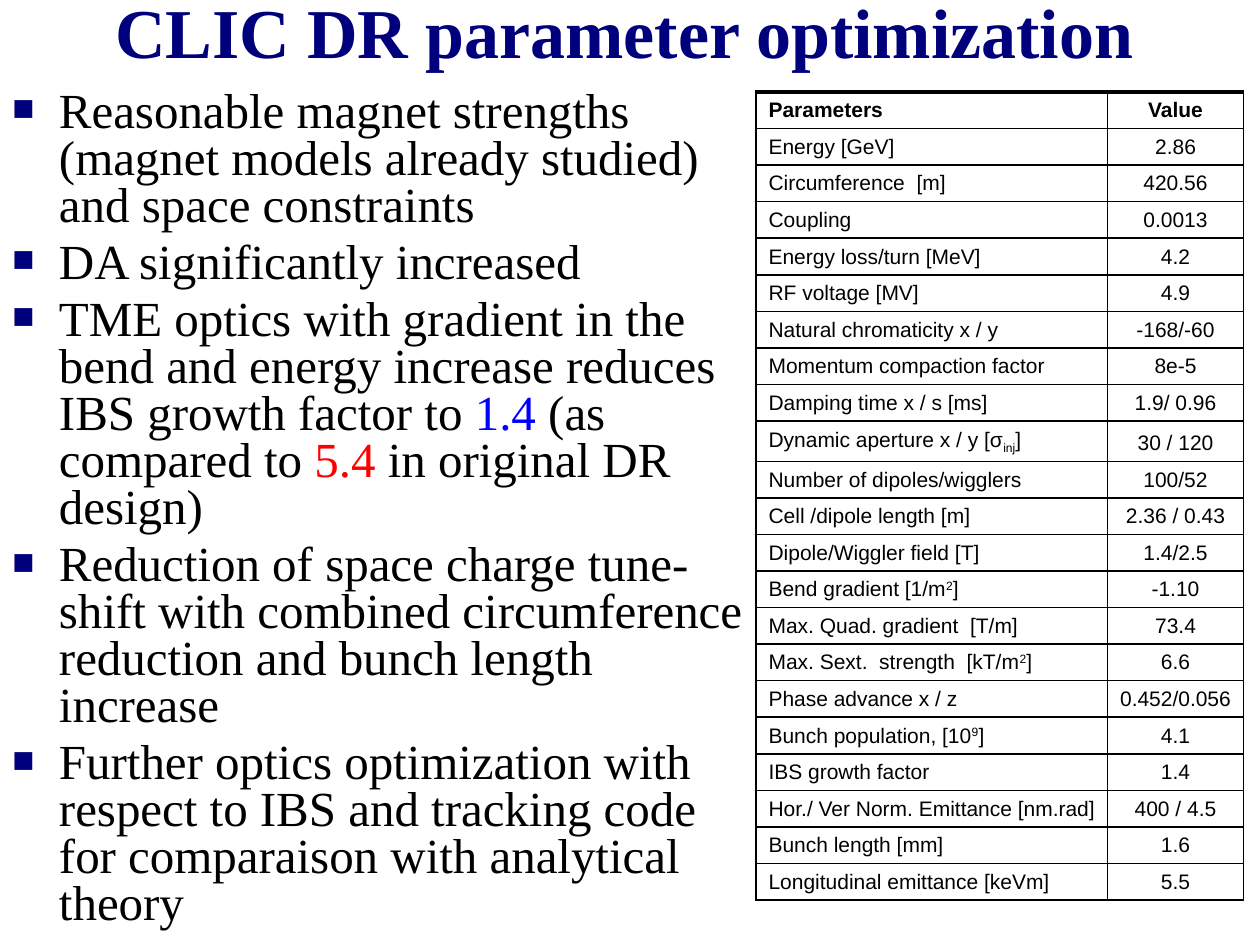
from lxml import etree
from pptx import Presentation, util as u
from pptx.dml.color import RGBColor
from pptx.enum import text
from pptx.oxml import parse_xml
from pptx.oxml.ns import nsdecls, qn

COLORS = {"navy": "00007D", "black": "000000", "blue": "0000FF", "red": "FF0000"}
TITLE = "CLIC DR parameter optimization"
BULLETS = [
    ["Reasonable magnet strengths (magnet models already studied) and space constraints"],
    ["DA significantly increased"],
    ["TME optics with gradient in the bend and energy increase reduces IBS growth factor to ",
     ("1.4 ", {"color": "blue"}), "(as compared to ",
     ("5.4 ", {"color": "red"}), "in original DR design)"],
    ["Reduction of space charge tune-shift with combined circumference reduction "
     "and bunch length increase"],
    ["Further optics optimization with respect to IBS and tracking code "
     "for comparaison with analytical theory"],
]
SUB, SUP = {"baseline": -25000}, {"baseline": 30000}
PARAMETERS = [
    (["Parameters"], "Value"),
    (["Energy [GeV]"], "2.86"),
    (["Circumference  [m]"], "420.56"),
    (["Coupling"], "0.0013"),
    (["Energy loss/turn [MeV]"], "4.2"),
    (["RF voltage [MV]"], "4.9"),
    (["Natural chromaticity x / y"], "-168/-60"),
    (["Momentum compaction factor"], "8e-5"),
    (["Damping time x / s [ms]"], "1.9/ 0.96"),
    (["Dynamic aperture x / y [σ", ("inj", SUB), "]"], "30 / 120"),
    (["Number of dipoles/wigglers"], "100/52"),
    (["Cell /dipole length [m]"], "2.36 / 0.43"),
    (["Dipole/Wiggler field [T]"], "1.4/2.5"),
    (["Bend gradient [1/m", ("2", SUP), "]"], "-1.10"),
    (["Max. Quad. gradient  [T/m]"], "73.4"),
    (["Max. Sext.  strength  [kT/m", ("2", SUP), "]"], "6.6"),
    (["Phase advance x / z"], "0.452/0.056"),
    (["Bunch population, [10", ("9", SUP), "]"], "4.1"),
    (["IBS growth factor"], "1.4"),
    (["Hor./ Ver Norm. Emittance [nm.rad]"], "400 / 4.5"),
    (["Bunch length [mm]"], "1.6"),
    (["Longitudinal emittance [keVm]"], "5.5"),
]


class Deck:
    """Holds the text styles and the current slide."""
    title_font = {"name": "Times New Roman", "size": u.Pt(40), "bold": True}
    body_font = {"name": "Times New Roman", "size": u.Pt(28), "bold": False}
    cell_font = {"name": "Arial", "size": u.Pt(12), "bold": False}

    def __init__(self):
        self.prs = Presentation()
        self.prs.slide_width, self.prs.slide_height = u.Inches(10), u.Inches(7.5)
        self.s = self.prs.slides.add_slide(self.prs.slide_layouts[6])

    def runs(self, p, parts, font, color="black"):
        """Add plain strings, or (string, overrides) pairs, as runs of p."""
        for part in parts:
            words, extra = (part, {}) if isinstance(part, str) else part
            r = p.add_run()
            r.text = words
            for key, value in font.items():
                setattr(r.font, key, value)
            r.font.color.rgb = RGBColor.from_string(COLORS[extra.get("color", color)])
            if "baseline" in extra:
                r._r.get_or_add_rPr().set("baseline", str(extra["baseline"]))

    def box(self, *at):
        tf = self.s.shapes.add_textbox(*map(u.Inches, at)).text_frame
        tf.word_wrap = True
        return tf

    def title(self, words, *at):
        tf = self.box(*at)
        tf.vertical_anchor = text.MSO_ANCHOR.MIDDLE
        p = tf.paragraphs[0]
        p.alignment = text.PP_ALIGN.CENTER
        self.runs(p, [words], self.title_font, "navy")

    def bullets(self, items, *at):
        tf = self.box(*at)
        for i, parts in enumerate(items):
            p = tf.add_paragraph() if i else tf.paragraphs[0]
            p.line_spacing = 0.8
            p.space_before = u.Pt(5.6 if i else 0)
            pPr = p._p.get_or_add_pPr()
            pPr.set("marL", str(u.Inches(0.37)))
            pPr.set("indent", str(-u.Inches(0.37)))
            color = etree.SubElement(pPr, qn("a:buClr"))
            etree.SubElement(color, qn("a:srgbClr"), val=COLORS["navy"])
            etree.SubElement(pPr, qn("a:buSzPct"), val="75000")
            etree.SubElement(pPr, qn("a:buFont"), typeface="Arial")
            etree.SubElement(pPr, qn("a:buChar"), char="■")
            self.runs(p, parts, self.body_font)

    def borders(self, cell, top):
        for side in "LRTB":
            width = u.Pt(top if side == "T" else 1)
            cell._tc.get_or_add_tcPr().append(parse_xml(
                f'<a:ln{side} {nsdecls("a")} w="{width}"><a:solidFill>'
                f'<a:srgbClr val="{COLORS["black"]}"/></a:solidFill></a:ln{side}>'))

    def cell(self, cell, parts, header, value):
        margins = {"margin_top": 0.04, "margin_bottom": 0.05,
                   "margin_left": 0.08 if value else 0.1, "margin_right": 0.08}
        for key, inches in margins.items():
            setattr(cell, key, u.Inches(inches))
        cell.vertical_anchor = text.MSO_ANCHOR.BOTTOM
        self.borders(cell, 2 if header else 1)
        cell.fill.background()
        p = cell.text_frame.paragraphs[0]
        p.alignment = text.PP_ALIGN.CENTER if value else text.PP_ALIGN.LEFT
        self.runs(p, parts, {**self.cell_font, "bold": header})

    def table(self, rows, left, top, widths, height, subscript_height):
        """Equal rows share the height left by the one taller subscript row."""
        frame = self.s.shapes.add_table(len(rows), 2, u.Inches(left), u.Inches(top),
                                        u.Inches(sum(widths)), u.Inches(height))
        tb = frame.table
        tb.first_row = tb.horz_banding = False
        for column, width in zip(tb.columns, widths):
            column.width = u.Inches(width)
        plain = (height - subscript_height) / (len(rows) - 1)
        for i, (label, value) in enumerate(rows):
            tall = ("inj", SUB) in label
            tb.rows[i].height = u.Inches(subscript_height if tall else plain)
            self.cell(tb.cell(i, 0), label, i == 0, False)
            self.cell(tb.cell(i, 1), [value], i == 0, True)


def main():
    deck = Deck()
    deck.title(TITLE, 0.58, 0.08, 8.75, 0.33)
    deck.table(PARAMETERS, 6, 0.73, (2.79, 1.08), 6.34, 0.32)
    deck.bullets(BULLETS, 0, 0.67, 6, 5.92)
    deck.prs.save("out.pptx")


if __name__ == "__main__":
    main()
